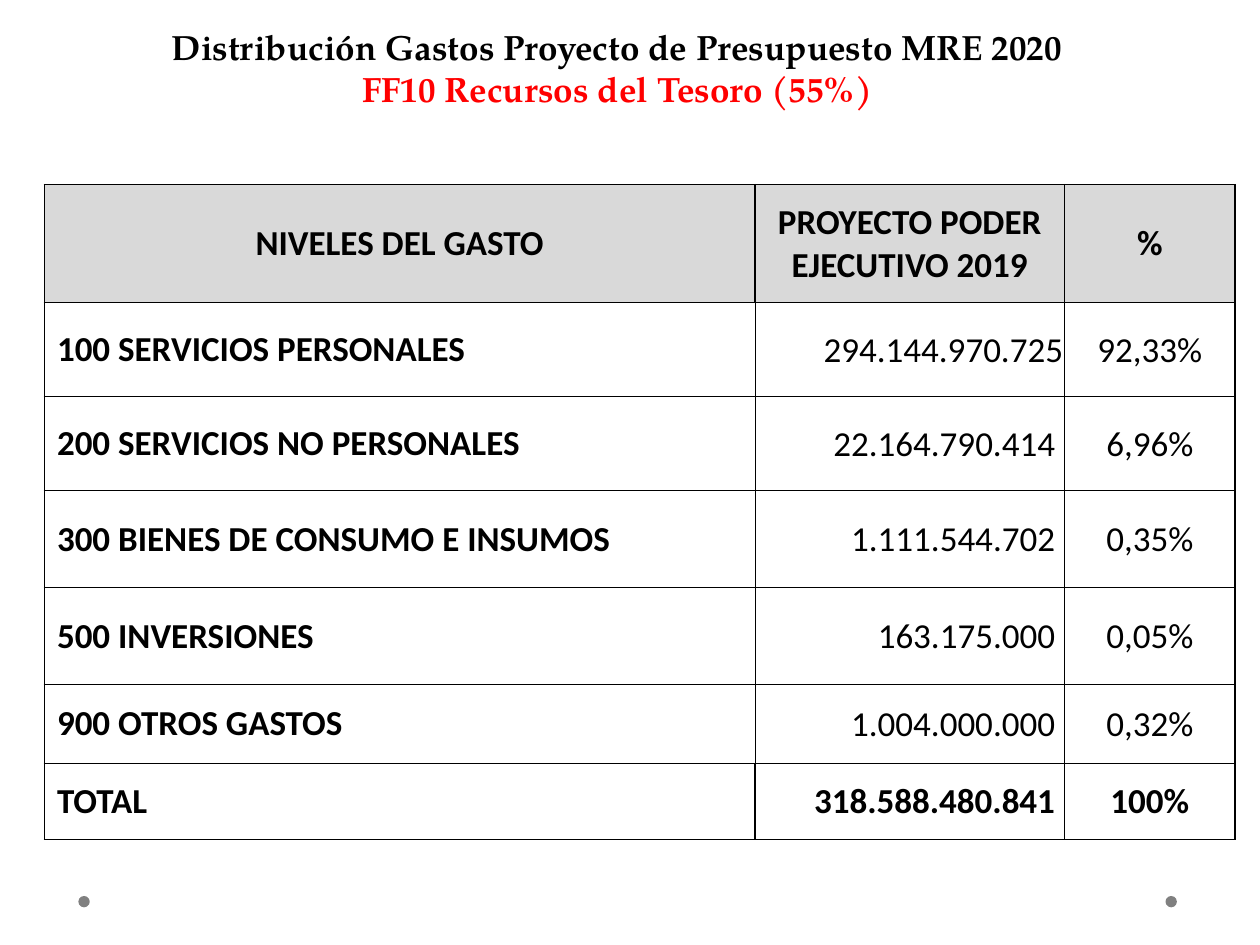
from lxml.etree import SubElement
from pptx import Presentation
from pptx.dml.color import RGBColor
from pptx.enum.shapes import MSO_SHAPE as Shape
from pptx.enum.text import MSO_ANCHOR as Anchor, MSO_AUTO_SIZE as AutoSize, PP_ALIGN as Align
from pptx.oxml.ns import qn
from pptx.util import Pt

BLACK = RGBColor(0, 0, 0)
RED = RGBColor(255, 0, 0)
GRAY = RGBColor(128, 128, 128)
LIGHT_GRAY = RGBColor(217, 217, 217)
TITLE_FONT = "TeX Gyre Pagella"
TABLE_FONT = "Calibri"

TITLE_LINES = (
    ("Distribución Gastos Proyecto de Presupuesto MRE 2020", BLACK),
    ("FF10 Recursos del Tesoro (55%)", RED),
)
BUDGET_ROWS = (
    ("NIVELES DEL GASTO", "PROYECTO PODER EJECUTIVO 2019", "%"),
    ("100 SERVICIOS PERSONALES", "294.144.970.725", "92,33%"),
    ("200 SERVICIOS NO PERSONALES", "22.164.790.414", "6,96%"),
    ("300 BIENES DE CONSUMO E INSUMOS", "1.111.544.702", "0,35%"),
    ("500 INVERSIONES", "163.175.000", "0,05%"),
    ("900 OTROS GASTOS", "1.004.000.000", "0,32%"),
    ("TOTAL", "318.588.480.841", "100%"),
)
COLUMN_WIDTHS = (406, 177, 97.4)
ROW_HEIGHTS = (67.5, 53.7, 53.7, 55.4, 55.4, 45.1, 43.4)
COLUMN_ALIGNS = (Align.LEFT, Align.RIGHT, Align.CENTER)
LAST_ROW = len(BUDGET_ROWS) - 1
LAST_COLUMN = len(COLUMN_WIDTHS) - 1


def style_font(font, name, color, bold):
    font.name = name
    font.size = Pt(20)
    font.bold = bold
    font.color.rgb = color


def add_dot(page, left):
    dot = page.shapes.add_shape(Shape.OVAL, Pt(left), Pt(512), Pt(6.5), Pt(6.5))
    dot.shadow.inherit = False
    dot.fill.solid()
    dot.fill.fore_color.rgb = GRAY
    dot.line.fill.background()


def fill_title(page):
    title = page.shapes.title
    title.left, title.top = Pt(-14.4), Pt(9.4)
    title.width, title.height = Pt(734.4), Pt(56.9)
    frame = title.text_frame
    frame.text = "\v".join(text for text, color in TITLE_LINES)
    frame.auto_size = AutoSize.NONE
    frame.vertical_anchor = Anchor.BOTTOM
    para = frame.paragraphs[0]
    para.alignment = Align.CENTER
    for span, (text, color) in zip(para.runs, TITLE_LINES):
        style_font(span.font, TITLE_FONT, color, True)


def draw_borders(cell, row, column):
    framed = row in (0, LAST_ROW)
    heavy_sides = {
        "a:lnL": framed or column == 0,
        "a:lnR": framed or column == LAST_COLUMN,
        "a:lnT": framed or row == 1,
        "a:lnB": framed or row == LAST_ROW - 1,
    }
    properties = cell._tc.get_or_add_tcPr()
    for side, heavy in heavy_sides.items():
        line = SubElement(properties, qn(side), w=str(Pt(1 if heavy else 0.5)))
        fill = SubElement(line, qn("a:solidFill"))
        SubElement(fill, qn("a:srgbClr"), val=str(BLACK))


def set_margins(cell, row, column):
    if row == 0 or column == 0:
        margins = (7.2, 3.6, 7.2, 3.6)
    else:
        right = 5.3 if column == 1 and row > 1 else 0.7
        margins = (0.7, 0.7, right, 0)
    cell.margin_left, cell.margin_top, cell.margin_right, cell.margin_bottom = map(Pt, margins)


def fill_cell(cell, text, row, column):
    draw_borders(cell, row, column)
    set_margins(cell, row, column)
    cell.vertical_anchor = Anchor.MIDDLE
    if row == 0:
        cell.fill.solid()
        cell.fill.fore_color.rgb = LIGHT_GRAY
    else:
        cell.fill.background()
    cell.text_frame.text = text
    para = cell.text_frame.paragraphs[0]
    para.alignment = Align.CENTER if row == 0 else COLUMN_ALIGNS[column]
    bold = column == 0 or row in (0, LAST_ROW)
    style_font(para.runs[0].font, TABLE_FONT, BLACK, bold)


def add_budget_table(page):
    table = page.shapes.add_table(
        len(BUDGET_ROWS), len(COLUMN_WIDTHS), Pt(25.4), Pt(105.5),
        Pt(sum(COLUMN_WIDTHS)), Pt(sum(ROW_HEIGHTS)),
    ).table
    table.first_row = False
    table.horz_banding = False
    for column, width in zip(table.columns, COLUMN_WIDTHS):
        column.width = Pt(width)
    for row, height in zip(table.rows, ROW_HEIGHTS):
        row.height = Pt(height)
    for row, texts in enumerate(BUDGET_ROWS):
        for column, text in enumerate(texts):
            fill_cell(table.cell(row, column), text, row, column)


def main():
    deck = Presentation()
    deck.slide_width, deck.slide_height = Pt(720), Pt(540)
    page = deck.slides.add_slide(deck.slide_layouts[5])
    for left in (666, 44.8):
        add_dot(page, left)
    fill_title(page)
    add_budget_table(page)
    deck.save("out.pptx")


if __name__ == "__main__":
    main()
